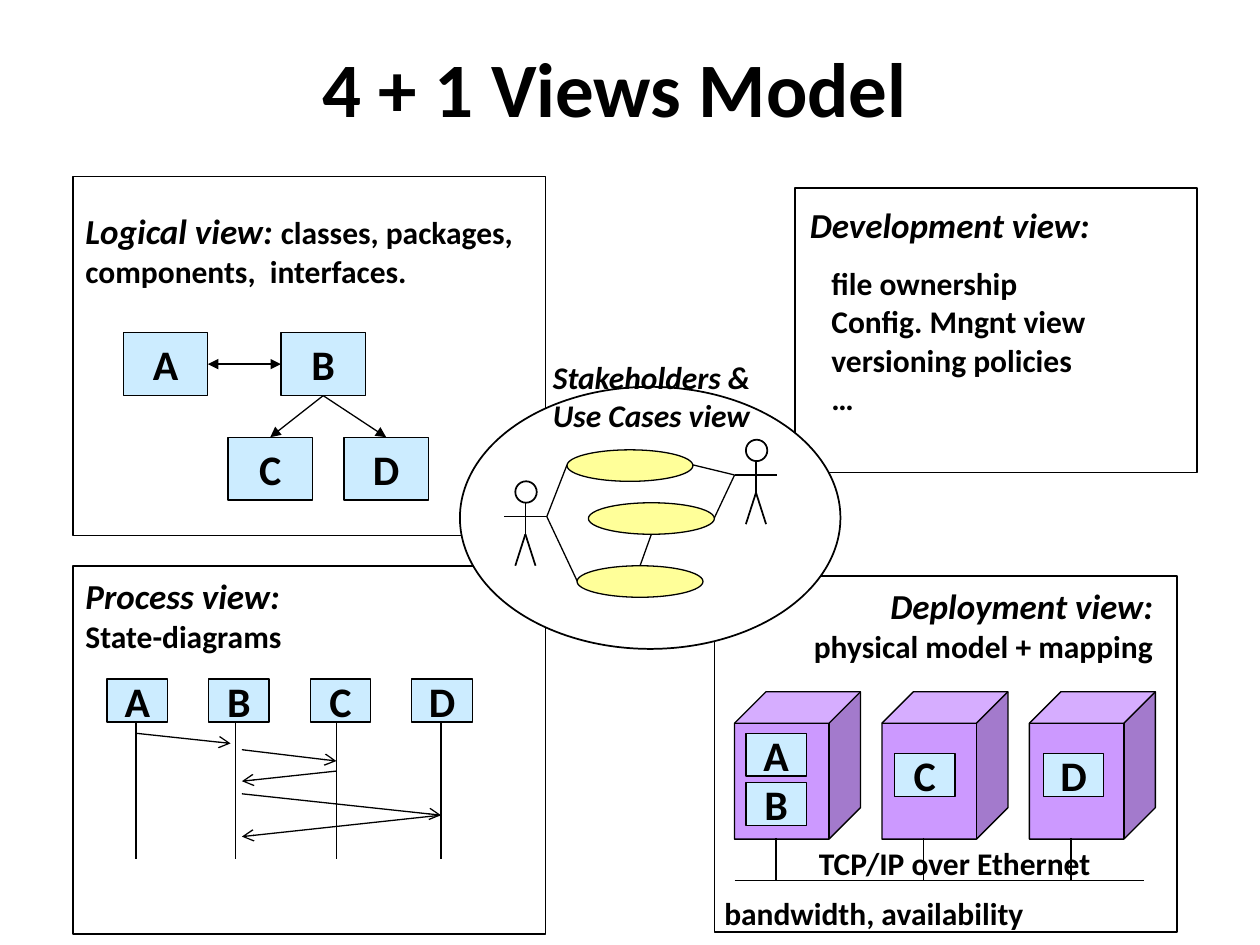
from dataclasses import dataclass
from itertools import pairwise

from lxml.etree import SubElement
from pptx import Presentation
from pptx.dml.color import RGBColor
from pptx.enum.shapes import MSO_CONNECTOR, MSO_SHAPE
from pptx.enum.text import MSO_ANCHOR, PP_ALIGN
from pptx.oxml.ns import qn
from pptx.shapes.autoshape import Shape
from pptx.shapes.connector import Connector
from pptx.text.text import TextFrame
from pptx.util import Inches, Pt

BLACK = RGBColor(0x00, 0x00, 0x00)
WHITE = RGBColor(0xFF, 0xFF, 0xFF)
SKY = RGBColor(0xCC, 0xEC, 0xFF)
VIOLET = RGBColor(0xCC, 0x99, 0xFF)
YELLOW = RGBColor(0xFF, 0xFF, 0x99)
FONT = "Calibri"
COLUMNS, ROWS = 10, 7.5
THIN, MEDIUM = 0.75, 1

prs = Presentation()
prs.slide_width, prs.slide_height = Inches(10), Inches(7.5)
slide = prs.slides.add_slide(prs.slide_layouts[6])


@dataclass(frozen=True)
class Area:
    """A block of grid cells: first column, first row, columns, rows."""
    column: float
    row: float
    columns: float
    rows: float

    def lengths(self) -> tuple[int, int, int, int]:
        return (*position(self.column, self.row), *position(self.columns, self.rows))


@dataclass(frozen=True)
class Run:
    text: str
    size: float = 18
    italic: bool = False


@dataclass(frozen=True)
class Node:
    letter: str
    column: float
    row: float


@dataclass(frozen=True)
class Actor:
    column: float
    row: float


def position(column: float, row: float) -> tuple[int, int]:
    return round(column / COLUMNS * prs.slide_width), round(row / ROWS * prs.slide_height)


def write(frame: TextFrame, *lines: tuple[Run, ...], align=PP_ALIGN.LEFT, anchor=MSO_ANCHOR.TOP,
          spacing: float = 1, before: float = 0, wrap: bool = True) -> None:
    """Fill a frame with one paragraph for each tuple of runs."""
    frame.word_wrap = wrap
    frame.vertical_anchor = anchor
    for index, line in enumerate(lines):
        paragraph = frame.add_paragraph() if index else frame.paragraphs[0]
        paragraph.alignment = align
        paragraph.line_spacing = spacing
        paragraph.space_before = Pt(before if index else 0)
        for part in line:
            run = paragraph.add_run()
            run.text = part.text
            run.font.name, run.font.size = FONT, Pt(part.size)
            run.font.bold, run.font.italic = True, part.italic
            run.font.color.rgb = BLACK


def add_label(area: Area, *lines: tuple[Run, ...], **text_format) -> None:
    write(slide.shapes.add_textbox(*area.lengths()).text_frame, *lines, **text_format)


def add_figure(kind: MSO_SHAPE, area: Area, fill: RGBColor | None = WHITE,
               width: float = THIN) -> Shape:
    figure = slide.shapes.add_shape(kind, *area.lengths())
    figure.shadow.inherit = False
    if fill is None:
        figure.fill.background()
    else:
        figure.fill.solid()
        figure.fill.fore_color.rgb = fill
    figure.line.color.rgb = BLACK
    figure.line.width = Pt(width)
    return figure


def add_line(start: tuple[float, float], end: tuple[float, float], width: float = THIN,
             head: str = "", tail: str = "") -> Connector:
    line = slide.shapes.add_connector(MSO_CONNECTOR.STRAIGHT, *position(*start), *position(*end))
    line.line.color.rgb = BLACK
    line.line.width = Pt(width)
    for tag, arrow in (("a:headEnd", head), ("a:tailEnd", tail)):
        if arrow:
            SubElement(line.line._get_or_add_ln(), qn(tag), type=arrow)
    SubElement(line._element.spPr, qn("a:effectLst"))
    return line


def add_node(node: Node, columns: float = 0.48, rows: float = 0.34) -> Shape:
    box = add_figure(MSO_SHAPE.RECTANGLE, Area(node.column, node.row, columns, rows), SKY)
    write(box.text_frame, (Run(node.letter, 24),), align=PP_ALIGN.CENTER,
          anchor=MSO_ANCHOR.MIDDLE, wrap=False)
    return box


def add_relation(source: Shape, source_side: int, target: Shape, target_side: int,
                 head: str = "") -> None:
    relation = add_line((0, 0), (0, 0), head=head, tail="triangle")
    relation.begin_connect(source, source_side)
    relation.end_connect(target, target_side)


def add_actor(actor: Actor) -> tuple[float, float]:
    """Draw a stick figure whose head is centred on the column; return its neck-and-arm point."""
    x, top = actor.column, actor.row
    hip = (x, top + 0.42)
    arms = top + 0.28
    add_line((x, top + 0.17), hip, MEDIUM)
    add_figure(MSO_SHAPE.OVAL, Area(x - 0.08, top, 0.17, 0.17), None, MEDIUM)
    add_line((x - 0.17, arms), (x + 0.17, arms), MEDIUM)
    for side in (-0.08, 0.08):
        add_line((x + side, top + 0.67), hip, MEDIUM)
    return x, arms


def add_panels() -> None:
    process, deployment = Area(0.58, 4.49, 3.75, 2.92), Area(5.67, 4.57, 3.67, 2.83)
    development, logical = Area(6.31, 1.49, 3.19, 2.26), Area(0.58, 1.4, 3.75, 2.85)
    for area in (process, deployment, development, logical):
        panel = add_figure(MSO_SHAPE.RECTANGLE, area, width=MEDIUM)
        if area is development:
            color = panel.fill._xPr.find(qn("a:solidFill"))[0]
            SubElement(color, qn("a:alpha"), val="50000")
    add_figure(MSO_SHAPE.OVAL, Area(3.65, 3.07, 3.02, 2.08), width=MEDIUM)


def add_logical_view() -> None:
    add_label(Area(0.58, 1.46, 3.67, 1.04),
              (Run("Logical view: ", 20, True), Run("classes, packages, components,  interfaces.")),
              anchor=MSO_ANCHOR.MIDDLE)
    a, b, c, d = (add_node(node, 0.67, 0.5) for node in (
        Node("A", 0.98, 2.64), Node("B", 2.23, 2.64), Node("C", 1.81, 3.47), Node("D", 2.73, 3.47)))
    add_relation(a, 3, b, 1, head="triangle")
    for child in (c, d):
        add_relation(b, 2, child, 0)


def add_process_view() -> None:
    add_label(Area(0.58, 4.63, 3.58, 0.64), (Run("Process view:", 20, True),),
              (Run("State-diagrams"),), spacing=0.6, before=9)
    lifelines = (1.08, 1.87, 2.67, 3.5)
    for index, letter in enumerate("ABCD"):
        add_node(Node(letter, 0.85 + 0.806 * index, 5.39))
    for x in lifelines:
        add_line((x, 5.74), (x, 6.82))
    a, _, c, d = lifelines
    b_left, b_right = 1.83, 1.92
    for start, end in (((a, 5.82), (b_left, 5.9)), ((b_right, 5.95), (c, 6.04)),
                       ((c, 6.12), (b_right, 6.2)), ((b_right, 6.3), (d, 6.47)),
                       ((d, 6.47), (b_right, 6.64))):
        add_line(start, end, tail="arrow")


def add_deployment_view() -> None:
    add_label(Area(5.75, 4.71, 3.5, 0.65), (Run("Deployment view:", 20, True),),
              (Run("physical model + mapping"),), align=PP_ALIGN.RIGHT, spacing=0.6, before=9)
    hosts = [5.83 + 1.17 * index for index in range(3)]
    for x in hosts:
        add_figure(MSO_SHAPE.CUBE, Area(x, 5.49, 1, 1.17), VIOLET)
    for node in (Node("A", 5.92, 5.82), Node("B", 5.92, 6.21),
                 Node("C", 7.1, 5.98), Node("D", 8.28, 5.98)):
        add_node(node)
    network = 6.99
    add_line((5.83, network), (9.08, network))
    for x in hosts:
        add_line((x + 0.33, 6.65), (x + 0.33, network))
    add_label(Area(5.65, 7.05, 2.71, 0.4), (Run("bandwidth, availability"),))
    add_label(Area(6.4, 6.65, 2.52, 0.4), (Run("TCP/IP over Ethernet"),))


def add_use_case_view() -> None:
    add_label(Area(4.29, 2.79, 1.84, 0.71), (Run("Stakeholders &", italic=True),),
              (Run("Use Cases view", italic=True),))
    left_x, left_arms = add_actor(Actor(4.17, 3.82))
    right_x, right_arms = add_actor(Actor(6, 3.49))
    cases = [Area(x, y, 1, 0.25) for x, y in ((4.5, 3.57), (4.67, 3.99), (4.58, 4.49))]
    for case in cases:
        add_figure(MSO_SHAPE.OVAL, case, YELLOW)
    first, second, third = cases
    for case in (first, third):
        add_line((left_x + 0.17, left_arms), (case.column, case.row + 0.12))
    for case in (first, second):
        add_line((right_x - 0.17, right_arms), (case.column + 1, case.row + 0.12))
    add_line((third.column + 0.5, third.row), (second.column + 0.5, second.row + second.rows))


def add_development_view() -> None:
    add_label(Area(6.5, 2.15, 2.58, 1.28), (Run("file ownership"),), (Run("Config. Mngnt view"),),
              (Run("versioning policies"),), (Run("…"),), spacing=0.6, before=9)
    add_label(Area(6.33, 1.57, 3, 0.43), (Run("Development view:", 20, True),),
              anchor=MSO_ANCHOR.MIDDLE)


if __name__ == "__main__":
    add_label(Area(0.57, 0.01, 8.62, 1.45), (Run("4 + 1 Views Model", 44),),
              align=PP_ALIGN.CENTER, anchor=MSO_ANCHOR.MIDDLE, spacing=0.9)
    add_panels()
    add_logical_view()
    add_process_view()
    add_deployment_view()
    add_use_case_view()
    add_development_view()
    prs.save("out.pptx")
